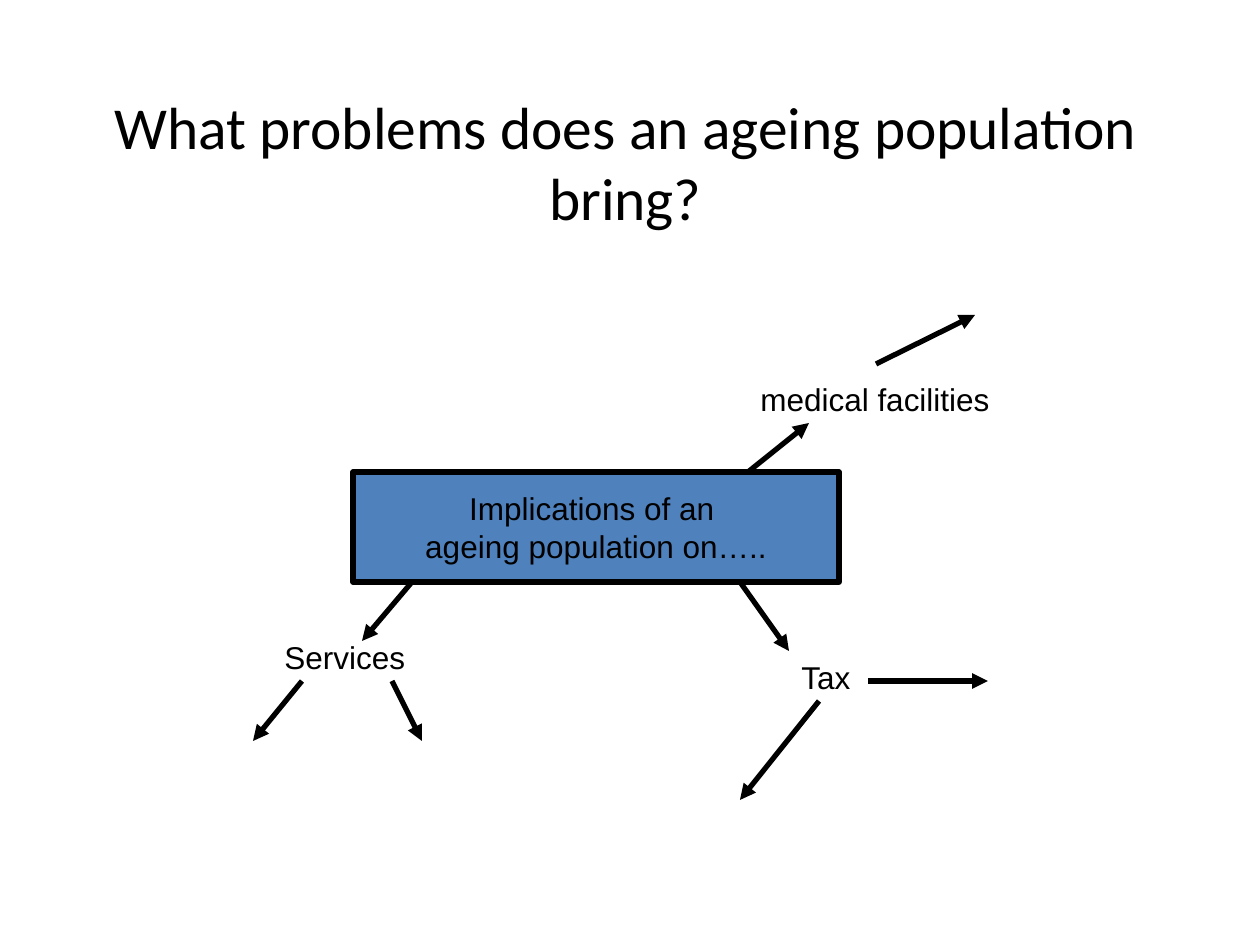
"""Builds a slide with a spider diagram on the problems of an ageing population."""
import pptx
import pptx.dml.color
import pptx.enum.shapes
import pptx.enum.text
import pptx.oxml
import pptx.oxml.ns
import pptx.util

RGB = pptx.dml.color.RGBColor.from_string
ALIGN = pptx.enum.text.PP_ALIGN
PX = 914400 / 126
THEME = {
    "ink": RGB("000000"),
    "box": RGB("4F81BD"),
    "line": pptx.util.Pt(3),
    "title": {"name": "Calibri", "size": pptx.util.Pt(34)},
    "body": {"name": "Arial", "size": pptx.util.Pt(18)},
}


def px(*values):
    return [pptx.util.Emu(round(v * PX)) for v in values]


def write(sp, lines, style, align, wrap):
    tf = sp.text_frame
    frame = {"word_wrap": wrap, "vertical_anchor": pptx.enum.text.MSO_ANCHOR.MIDDLE}
    for key, value in frame.items():
        setattr(tf, key, value)
    for i, line in enumerate(lines):
        p = tf.paragraphs[0] if i == 0 else tf.add_paragraph()
        p.alignment = align
        r = p.add_run()
        r.text = line
        for key, value in THEME[style].items():
            setattr(r.font, key, value)
        r.font.color.rgb = THEME["ink"]


prs = pptx.Presentation()
prs.slide_width, prs.slide_height = px(1260, 945)
s = prs.slides.add_slide(prs.slide_layouts[6])

title = s.shapes.add_textbox(*px(54, 38, 1143, 246))
write(title, ["What problems does an ageing population bring?"], "title", ALIGN.CENTER, True)

box = s.shapes.add_shape(pptx.enum.shapes.MSO_SHAPE.RECTANGLE, *px(353, 472, 486, 110))
box.shadow.inherit = False
box.fill.solid()
box.fill.fore_color.rgb = THEME["box"]
box.line.color.rgb = THEME["ink"]
box.line.width = THEME["line"]
write(box, ["Implications of an ", "ageing population on….."], "body", ALIGN.CENTER, False)

labels = [
    ("medical facilities", 748, 373, 255, False),
    ("Tax", 789, 651, 297, True),
    ("Services", 272, 631, 268, True),
]
for text, left, top, width, wrap in labels:
    sp = s.shapes.add_textbox(*px(left, top, width, 51))
    write(sp, [text], "body", ALIGN.LEFT, wrap)

arrows = [
    (748, 472, 809, 423),
    (740, 582, 789, 651),
    (876, 364, 975, 315),
    (412, 582, 362, 641),
    (868, 681, 988, 681),
    (819, 701, 740, 800),
    (302, 681, 253, 741),
    (392, 681, 422, 741),
]
for ends in arrows:
    sp = s.shapes.add_connector(pptx.enum.shapes.MSO_CONNECTOR.STRAIGHT, *px(*ends))
    sp.line.color.rgb = THEME["ink"]
    sp.line.width = THEME["line"]
    spPr = sp._element.spPr
    tail = pptx.oxml.parse_xml(f'<a:tailEnd {pptx.oxml.ns.nsdecls("a")} type="triangle"/>')
    spPr.find(pptx.oxml.ns.qn("a:ln")).append(tail)
    spPr.append(pptx.oxml.parse_xml(f'<a:effectLst {pptx.oxml.ns.nsdecls("a")}/>'))

prs.save("out.pptx")
